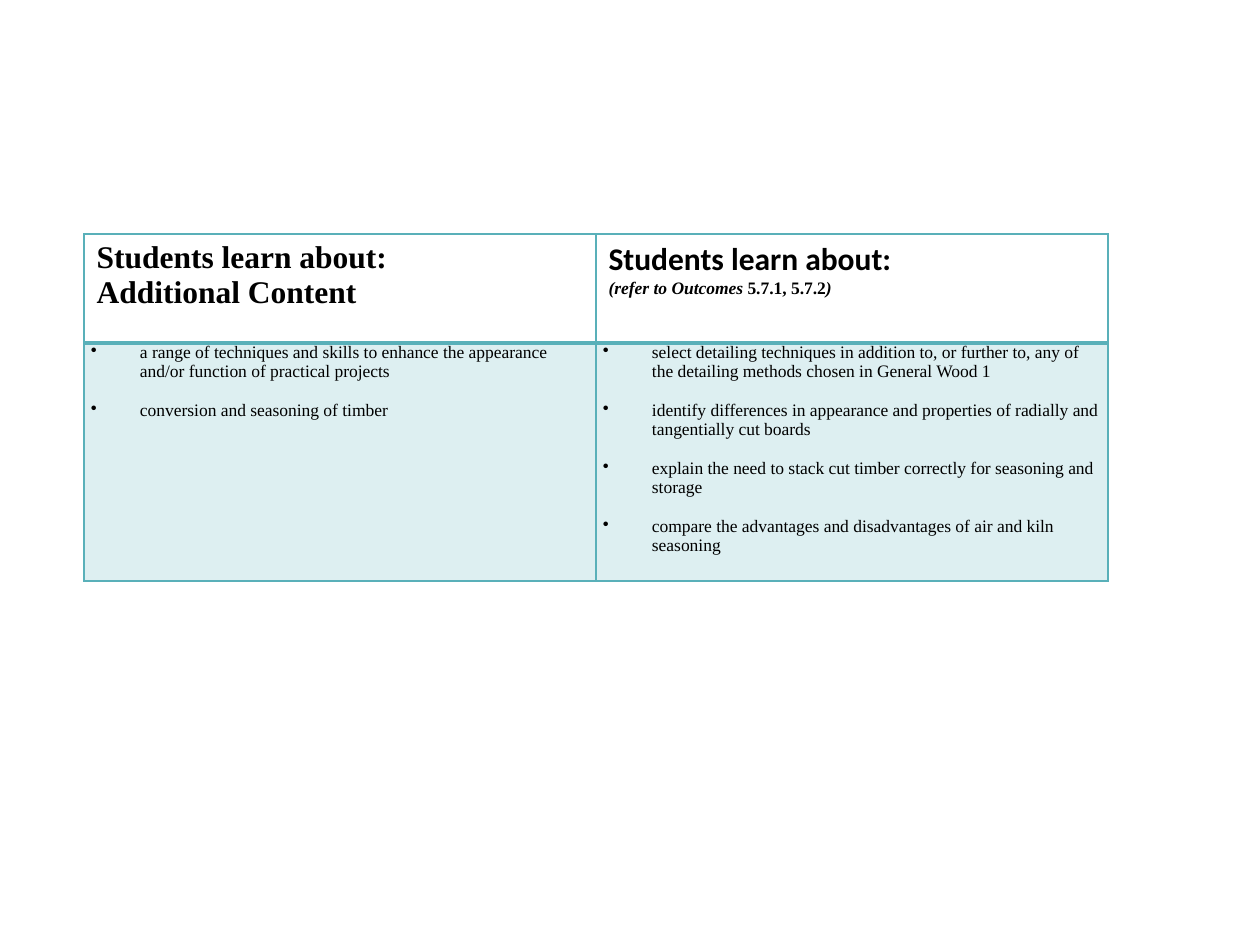
from dataclasses import dataclass

from lxml import etree
from pptx import Presentation, util as u
from pptx.dml.color import RGBColor
from pptx.oxml.ns import qn

SCALE = 914400 / 126


@dataclass(frozen=True)
class Theme:
    ink: str = "000000"
    teal: str = "59B0B9"
    tint: int = 20
    serif: str = "Times New Roman"
    sans: str = "Calibri"
    heading: int = 18
    body: int = 10
    gap: int = 11
    rule: int = 1
    heavy_rule: int = 2


THEME = Theme()

TOPICS = [
    "a range of techniques and skills to enhance the appearance and/or function of practical projects",
    "conversion and seasoning of timber",
]
SKILLS = [
    "select detailing techniques in addition to, or further to, any of the detailing methods chosen in General Wood 1",
    "identify differences in appearance and properties of radially and tangentially cut boards",
    "explain the need to stack cut timber correctly for seasoning and storage",
    "compare the advantages and disadvantages of air and kiln seasoning",
]


def px(length):
    return u.Emu(round(length * SCALE))


def add_text(para, words, *, size=THEME.body, face=THEME.serif, bold=False, italic=False):
    span = para.add_run()
    span.text = words
    font = span.font
    font.size, font.name = u.Pt(size), face
    font.bold, font.italic = bold, italic
    font.color.rgb = RGBColor.from_string(THEME.ink)


def next_para(cell):
    """Return the cell's first paragraph while it is empty, then new ones."""
    first = cell.text_frame.paragraphs[0]
    return cell.text_frame.add_paragraph() if first.runs else first


def add_heading(cell, words, face=THEME.serif):
    add_text(next_para(cell), words, size=THEME.heading, face=face, bold=True)


def add_bullets(cell, items):
    cell.margin_left = cell.margin_right = px(7)
    cell.margin_top = cell.margin_bottom = 0
    for index, item in enumerate(items):
        para = next_para(cell)
        if index:
            para.space_before = u.Pt(THEME.gap)
        props = para._p.get_or_add_pPr()
        props.set("marL", str(px(49)))
        props.set("indent", str(px(-49)))
        etree.SubElement(props, qn("a:buChar"), char="•")
        add_text(para, item)


def tint_cell(cell):
    cell.fill.solid()
    cell.fill.fore_color.rgb = RGBColor.from_string(THEME.teal)
    color = cell._tc.tcPr.find(".//" + qn("a:srgbClr"))
    etree.SubElement(color, qn("a:alpha"), val=str(THEME.tint * 1000))


def set_borders(cell, **widths):
    """Rule the sides L, R, T and B; a keyword overrides a side's width."""
    props = cell._tc.get_or_add_tcPr()
    for index, side in enumerate("LRTB"):
        width = u.Pt(widths.get(side, THEME.rule))
        line = etree.Element(qn(f"a:ln{side}"), w=str(width))
        fill = etree.SubElement(line, qn("a:solidFill"))
        etree.SubElement(fill, qn("a:srgbClr"), val=THEME.teal)
        props.insert(index, line)


def add_grid(page, left, top, widths, heights):
    frame = page.shapes.add_table(
        len(heights), len(widths), px(left), px(top), px(sum(widths)), px(sum(heights)))
    table = frame.table
    table.first_row = table.horz_banding = False
    for column, width in zip(table.columns, widths):
        column.width = px(width)
    for row, height in zip(table.rows, heights):
        row.height = px(height)
    return table


def main():
    deck = Presentation()
    deck.slide_width, deck.slide_height = px(1260), px(945)
    page = deck.slides.add_slide(deck.slide_layouts[6])
    table = add_grid(page, 84, 234, [512, 512], [109, 238])

    content, outcomes = table.cell(0, 0), table.cell(0, 1)
    add_heading(content, "Students learn about:")
    add_heading(content, "Additional Content")
    add_heading(outcomes, "Students learn about:", face=THEME.sans)
    para = next_para(outcomes)
    add_text(para, "(refer to Outcomes ", bold=True, italic=True)
    add_text(para, "5.7.1, 5.7.2", bold=True)
    add_text(para, ")", bold=True, italic=True)
    for cell in (content, outcomes):
        cell.fill.background()
        set_borders(cell, B=THEME.heavy_rule)

    for column, items in enumerate((TOPICS, SKILLS)):
        cell = table.cell(1, column)
        add_bullets(cell, items)
        tint_cell(cell)
        set_borders(cell, T=THEME.heavy_rule)

    deck.save("out.pptx")


if __name__ == "__main__":
    main()
